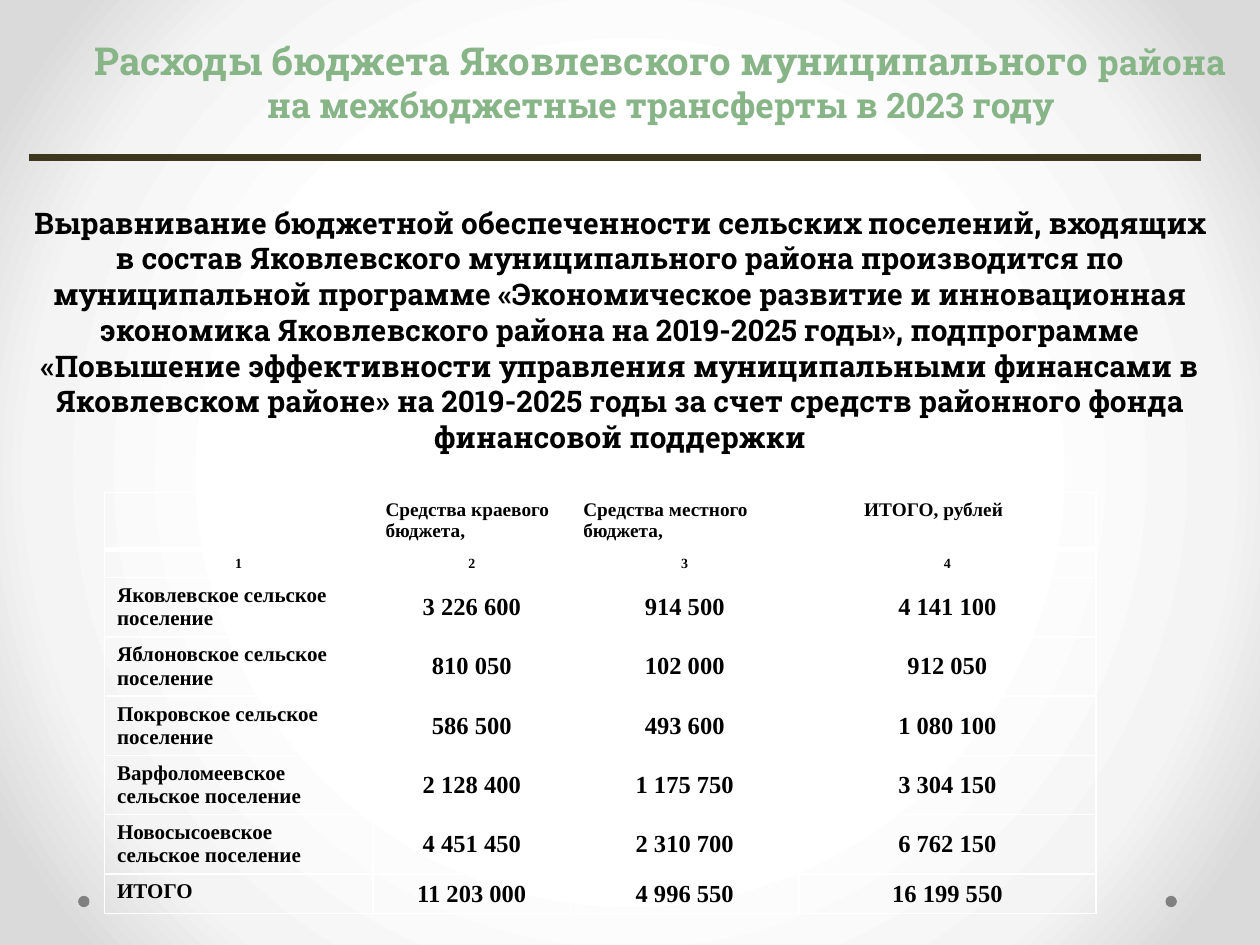
from pptx import Presentation
from pptx.dml.color import RGBColor
from pptx.enum.shapes import MSO_CONNECTOR, MSO_SHAPE
from pptx.enum.text import MSO_ANCHOR, MSO_AUTO_SIZE, PP_ALIGN
from pptx.oxml import parse_xml
from pptx.oxml.ns import nsdecls, qn
from pptx.util import Inches, Pt
from lxml import etree

LEFT, CENTER = PP_ALIGN.LEFT, PP_ALIGN.CENTER
TOP, MIDDLE = MSO_ANCHOR.TOP, MSO_ANCHOR.MIDDLE
GREEN = RGBColor(0x88, 0xB5, 0x88)
BROWN = RGBColor(0x3D, 0x37, 0x1D)
GRAY = RGBColor(0x80, 0x80, 0x80)
BLACK = RGBColor(0, 0, 0)
SLAB, SERIF = "Roboto Slab", "Times New Roman"

TITLE = [
    ("Расходы бюджета Яковлевского муниципального ", 22),
    ("района на межбюджетные трансферты в 2023 году", 20),
]
BODY = [(
    "Выравнивание бюджетной обеспеченности сельских поселений, входящих в состав "
    "Яковлевского муниципального района производится по муниципальной программе "
    "«Экономическое развитие и инновационная экономика Яковлевского района на "
    "2019-2025 годы», подпрограмме «Повышение эффективности управления "
    "муниципальными финансами в Яковлевском районе» на 2019-2025 годы за счет "
    "средств районного фонда финансовой поддержки", 17)]
ROWS = [
    ("", "Средства краевого бюджета,", "Средства местного бюджета,", "ИТОГО, рублей"),
    ("1", "2", "3", "4"),
    ("Яковлевское сельское поселение", "3 226 600", "914 500", "4 141 100"),
    ("Яблоновское сельское поселение", "810 050", "102 000", "912 050"),
    ("Покровское сельское поселение", "586 500", "493 600", "1 080 100"),
    ("Варфоломеевское сельское поселение", "2 128 400", "1 175 750", "3 304 150"),
    ("Новосысоевское сельское поселение", "4 451 450", "2 310 700", "6 762 150"),
    ("ИТОГО", "11 203 000", "4 996 550", "16 199 550"),
]
COL_WIDTHS = [2.13, 1.57, 1.81, 2.36]
ROW_HEIGHTS = [0.45, 0.22] + [0.47] * 5 + [0.31]
BACKDROP = [(50, "FFFFFF"), (76, "F4F4F4"), (92, "DADADA")]


def add_runs(p, runs, font, color, align):
    p.alignment = align
    for text, size in runs:
        r = p.add_run()
        r.text = text
        r.font.name, r.font.size, r.font.bold = font, Pt(size), True
        r.font.color.rgb = color


def fill_placeholder(sp, box, runs, color):
    sp.left, sp.top, sp.width, sp.height = map(Inches, box)
    tf = sp.text_frame
    tf.word_wrap, tf.auto_size = True, MSO_AUTO_SIZE.NONE
    tf.vertical_anchor = MIDDLE
    p = tf.paragraphs[0]
    p.space_before = Pt(0)
    add_runs(p, runs, SLAB, color, CENTER)
    return p


def cell_style(row, col):
    if row == 0:
        return 11, LEFT, TOP
    if row == 1:
        return 8, CENTER, TOP if col < 2 else MIDDLE
    return (12, LEFT, TOP) if col == 0 else (14, CENTER, MIDDLE)


def add_borders(cell, header):
    tcPr = cell._tc.get_or_add_tcPr()
    for i, side in enumerate("LRTB"):
        width = Pt(3 if header and side == "B" else 1)
        tcPr.insert(i, parse_xml(
            f'<a:ln{side} {nsdecls("a")} w="{width}"><a:solidFill>'
            f'<a:srgbClr val="FFFFFF"/></a:solidFill></a:ln{side}>'))


def set_backdrop(s):
    s.background.fill.gradient()
    old = s.element.find(".//" + qn("a:gradFill"))
    stops = "".join(f'<a:gs pos="{pos * 1000}"><a:srgbClr val="{color}"/></a:gs>'
                    for pos, color in BACKDROP)
    old.getparent().replace(old, parse_xml(
        f'<a:gradFill {nsdecls("a")} rotWithShape="1"><a:gsLst>{stops}</a:gsLst>'
        '<a:path path="circle"><a:fillToRect l="50000" t="50000" r="50000" b="50000"/>'
        '</a:path></a:gradFill>'))


def add_budget_table(s):
    box = map(Inches, (0.83, 3.91, sum(COL_WIDTHS), sum(ROW_HEIGHTS)))
    table = s.shapes.add_table(len(ROWS), len(COL_WIDTHS), *box).table
    table.horz_banding = False
    for column, width in zip(table.columns, COL_WIDTHS):
        column.width = Inches(width)
    for i, (row, height) in enumerate(zip(ROWS, ROW_HEIGHTS)):
        table.rows[i].height = Inches(height)
        for j, text in enumerate(row):
            cell = table.cell(i, j)
            size, align, anchor = cell_style(i, j)
            cell.vertical_anchor = anchor
            cell.fill.background()
            add_borders(cell, i == 0)
            if text:
                add_runs(cell.text_frame.paragraphs[0], [(text, size)], SERIF, BLACK, align)
    table.cell(0, 3).margin_left = Inches(0.52)


def main():
    prs = Presentation()
    prs.slide_width, prs.slide_height = Inches(10), Inches(7.5)
    s = prs.slides.add_slide(prs.slide_layouts[1])
    set_backdrop(s)

    for x in (0.62, 9.25):
        dot = s.shapes.add_shape(MSO_SHAPE.OVAL, *map(Inches, (x, 7.11, 0.09, 0.09)))
        dot.shadow.inherit = False
        dot.fill.solid()
        dot.fill.fore_color.rgb = GRAY
        dot.line.fill.background()

    fill_placeholder(s.shapes.title, (0.48, 0.39, 9.52, 0.51), TITLE, GREEN)
    p = fill_placeholder(s.placeholders[1], (0.16, 1.48, 9.52, 2.27), BODY, BLACK)
    pPr = p._p.get_or_add_pPr()
    pPr.set("marL", "0")
    pPr.set("indent", "0")
    etree.SubElement(pPr, qn("a:buNone"))

    rule = s.shapes.add_connector(MSO_CONNECTOR.STRAIGHT,
                                  *map(Inches, (0.23, 1.25, 9.53, 1.25)))
    rule.line.color.rgb = BROWN
    rule.line.width = Pt(3.75)
    etree.SubElement(rule._element.spPr, qn("a:effectLst"))

    add_budget_table(s)
    prs.save("out.pptx")


if __name__ == "__main__":
    main()
